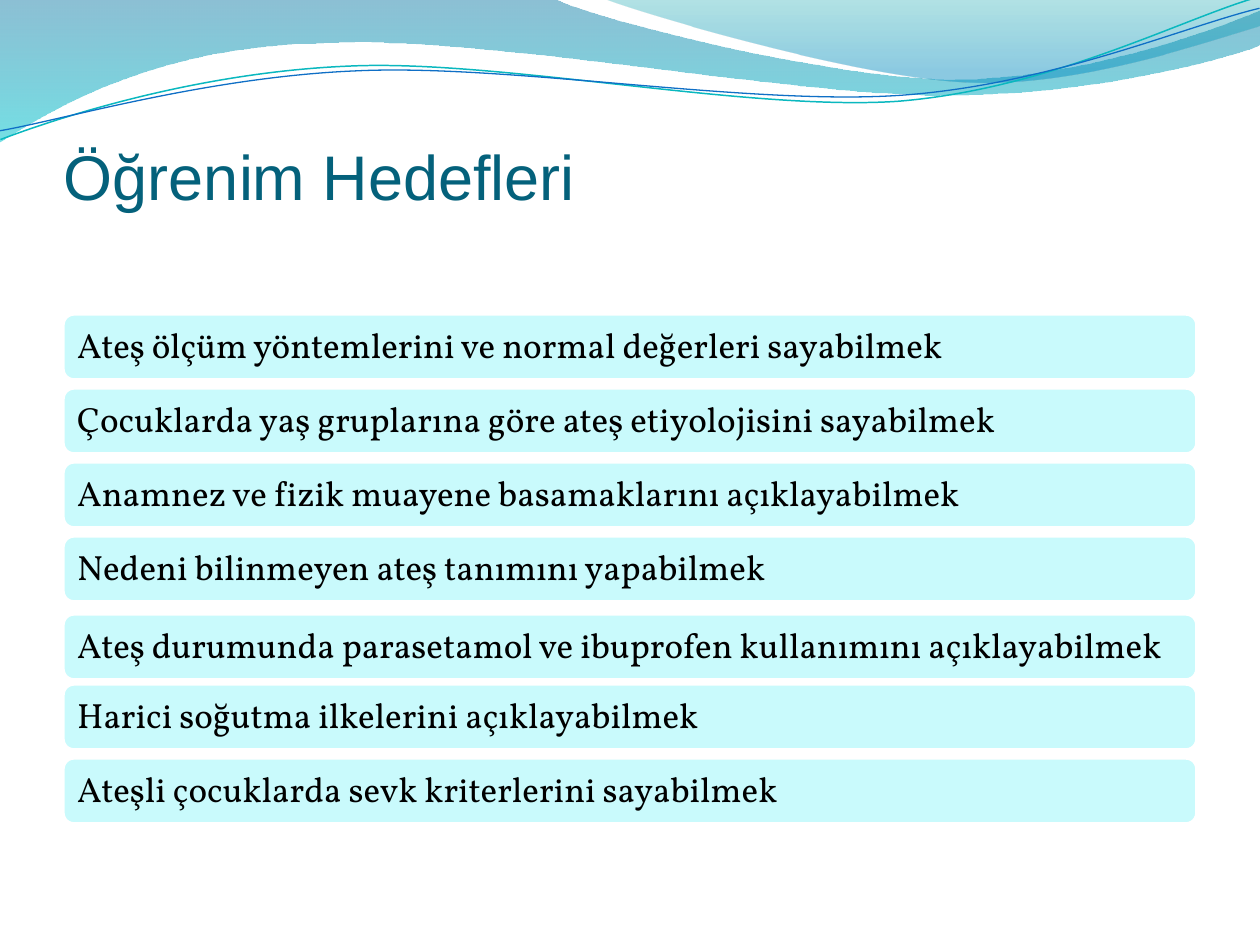
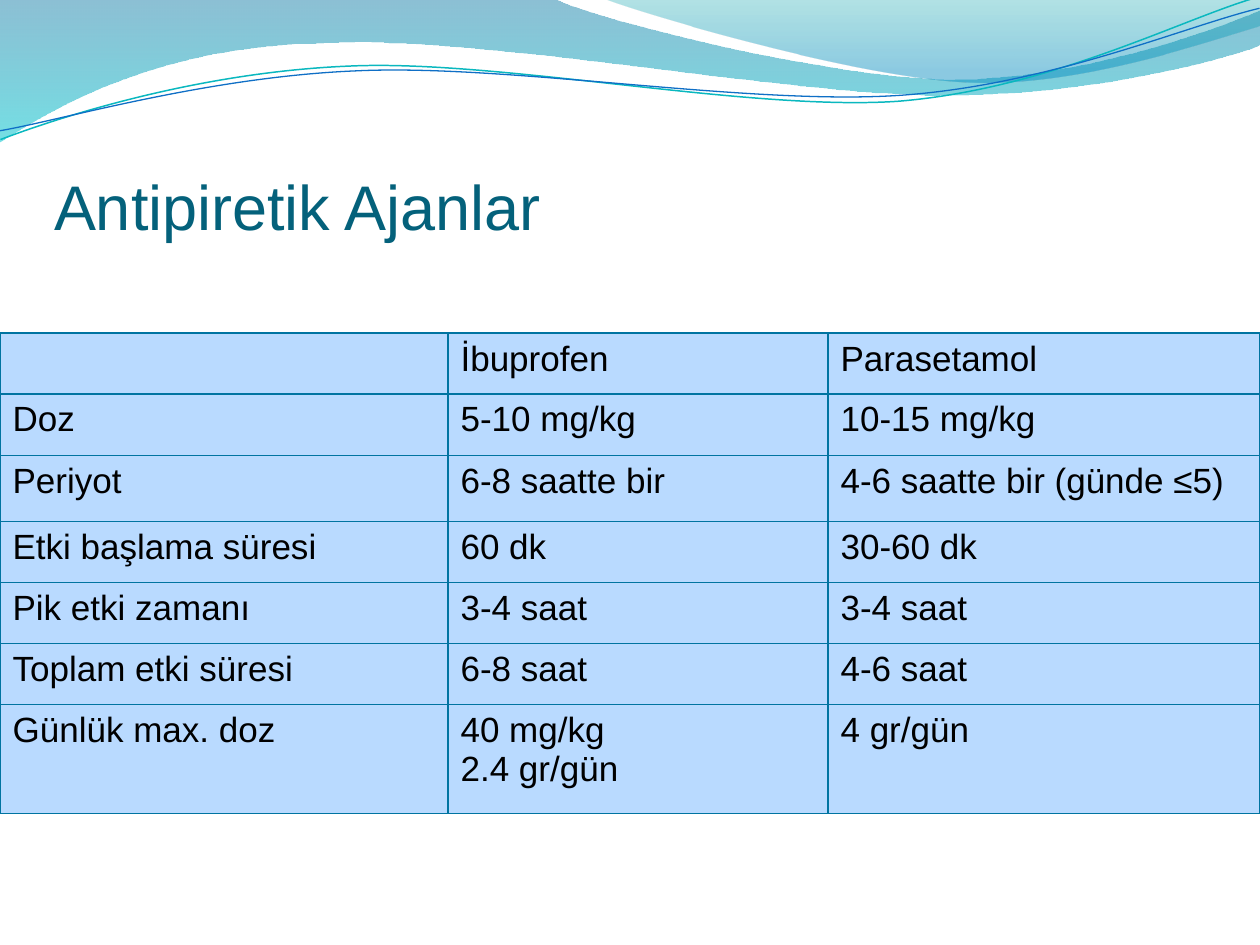
from dataclasses import dataclass

from lxml.etree import SubElement
from pptx import Presentation
from pptx.dml.color import RGBColor
from pptx.enum.lang import MSO_LANGUAGE_ID
from pptx.enum.shapes import MSO_SHAPE
from pptx.enum.text import MSO_ANCHOR, MSO_AUTO_SIZE, PP_ALIGN
from pptx.oxml.ns import qn
from pptx.util import Pt

EMU_PER_PX = 914400 / 126
TITLE_ONLY = 5


def px(length):
    return round(length * EMU_PER_PX)


@dataclass(frozen=True)
class Theme:
    heading_font: str = "Arial"
    goal_font: str = "Vollkorn"
    heading_size: int = 36
    body_size: int = 20
    heading: str = "04617B"
    text: str = "000000"
    bar: str = "C9FAFC"
    bar_edge: str = "FFFFFF"
    cell: str = "B9DAFF"
    cell_border: str = "0074A1"
    # Gradient stops: position, colour, opacity in percent
    broad_wave: tuple = ((0, "0074A1", 45), (1, "00C6CF", 55))
    right_wave: tuple = ((0, "00A1A9", 30), (0.8, "008BBF", 45))
    teal_strand: str = "0AB8BF"
    blue_strand: str = "0F6FC6"


# Outlines in px: two numbers are a straight step, six a Bézier curve
BROAD_WAVE = [
    (0, 0), (554, -1), (600, 21, 837, 79, 955, 79),
    (1075, 79, 1207, 33, 1260, 11), (1261, 45),
    (1239, 55, 1096, 96, 940, 95), (784, 95, 481, 35, 324, 43),
    (163, 45, 58, 105, -1, 142), (0, 0),
]
RIGHT_WAVE = [
    (604, -1), (641, 14, 859, 78, 969, 82),
    (1079, 87, 1211, 40, 1260, 26), (1260, 0), (604, -1),
]
# The strands lie level here and are tilted when drawn
STRAND_TILT = 357.3
TEAL_STRAND = [
    (-2, 110), (59, 90, 199, 52, 350, 53),
    (499, 53, 745, 117, 896, 114), (1049, 109, 1184, 45, 1260, 27),
]
BLUE_STRAND = [
    (-2, 101), (57, 94, 207, 57, 357, 58),
    (509, 58, 750, 112, 902, 108), (1052, 104, 1188, 52, 1262, 38),
]


class Deck:
    def __init__(self, theme):
        self.theme = theme
        self.prs = Presentation()
        self.prs.slide_width, self.prs.slide_height = px(1260), px(945)
        self.layout = self.prs.slide_layouts[TITLE_ONLY]
        self.slide = None

    def add_slide(self, heading, left, top):
        first = self.slide is None
        self.slide = self.prs.slides.add_slide(self.layout)
        if first:
            self.waves()
        self.heading(heading, left, top)

    def style(self, paragraph, font, size, color):
        paragraph.alignment = PP_ALIGN.LEFT
        paragraph.font.name = font
        paragraph.font.size = Pt(size)
        paragraph.font.color.rgb = RGBColor.from_string(color)
        for run in paragraph.runs:
            run.font.language_id = MSO_LANGUAGE_ID.TURKISH

    def heading(self, text, left, top):
        title = self.slide.shapes.title
        title.left, title.top, title.width, title.height = map(px, (left, top, 1134, 158))
        frame = title.text_frame
        frame.text = text
        frame.auto_size = MSO_AUTO_SIZE.NONE
        frame.vertical_anchor = MSO_ANCHOR.BOTTOM
        frame.margin_left = frame.margin_right = frame.margin_bottom = 0
        frame.margin_top = px(6)
        self.style(frame.paragraphs[0], self.theme.heading_font,
                   self.theme.heading_size, self.theme.heading)

    def waves(self):
        """Draw the waves once and hand them to the layout all slides share."""
        theme = self.theme
        shared = [
            self.wave(BROAD_WAVE, theme.broad_wave),
            self.wave(RIGHT_WAVE, theme.right_wave),
            self.strand(TEAL_STRAND, theme.teal_strand, 0.85),
            self.strand(BLUE_STRAND, theme.blue_strand, 0.75),
        ]
        for shape in shared:
            self.layout.shapes.element.append(shape.element)

    def outline(self, steps, close):
        points = [step[i:i + 2] for step in steps for i in range(0, len(step), 2)]
        builder = self.slide.shapes.build_freeform(*points[0], scale=EMU_PER_PX)
        builder.add_line_segments(points[1:], close=close)
        shape = builder.convert_to_shape()
        shape.shadow.inherit = False
        # Join the three points of each curved step into one curve
        outline = shape.element.xpath(".//a:path")[0]
        lines = iter(outline.findall(qn("a:lnTo")))
        for step in steps[1:]:
            parts = [next(lines) for _ in range(len(step) // 2)]
            if len(parts) == 3:
                curve = SubElement(outline, qn("a:cubicBezTo"))
                parts[0].addprevious(curve)
                for part in parts:
                    curve.append(part[0])
                    outline.remove(part)
        return shape

    def wave(self, steps, stops):
        wave = self.outline(steps, close=True)
        wave.line.fill.background()
        wave.fill.gradient()
        wave.fill.gradient_angle = 270
        for stop, (position, color, _) in zip(wave.fill.gradient_stops, stops):
            stop.position = position
            stop.color.rgb = RGBColor.from_string(color)
        stop_colors = wave.element.xpath(".//a:gradFill//a:srgbClr")
        for stop_color, (_, _, opacity) in zip(stop_colors, stops):
            SubElement(stop_color, qn("a:alpha"), val=str(opacity * 1000))
        return wave

    def strand(self, steps, color, width):
        strand = self.outline(steps, close=False)
        strand.rotation = STRAND_TILT
        strand.fill.background()
        strand.line.color.rgb = RGBColor.from_string(color)
        strand.line.width = Pt(width)
        return strand

    def goal_bar(self, text, top):
        bar = self.slide.shapes.add_shape(
            MSO_SHAPE.ROUNDED_RECTANGLE, px(63), px(top), px(1134), px(66))
        bar.shadow.inherit = False
        bar.fill.solid()
        bar.fill.fore_color.rgb = RGBColor.from_string(self.theme.bar)
        bar.line.color.rgb = RGBColor.from_string(self.theme.bar_edge)
        bar.line.width = Pt(2)
        frame = bar.text_frame
        frame.text = text
        frame.word_wrap = True
        frame.vertical_anchor = MSO_ANCHOR.MIDDLE
        frame.margin_left = frame.margin_right = px(11)
        frame.margin_top = frame.margin_bottom = px(10)
        paragraph = frame.paragraphs[0]
        paragraph.line_spacing = 0.9
        self.style(paragraph, self.theme.goal_font, self.theme.body_size, self.theme.text)

    def table(self, rows, top, widths, heights):
        table = self.slide.shapes.add_table(
            len(rows), len(widths), 0, px(top), px(sum(widths)), px(sum(heights))).table
        table.first_row = table.horz_banding = False
        for column, width in zip(table.columns, widths):
            column.width = px(width)
        for row, height, texts in zip(table.rows, heights, rows):
            row.height = px(height)
            for cell, text in zip(row.cells, texts):
                self.cell(cell, text)

    def cell(self, cell, text):
        cell.text = text
        for paragraph in cell.text_frame.paragraphs:
            self.style(paragraph, self.theme.heading_font,
                       self.theme.body_size, self.theme.text)
        # Borders come before the fill in the cell properties
        properties = cell._tc.get_or_add_tcPr()
        for side in ("a:lnL", "a:lnR", "a:lnT", "a:lnB"):
            border = SubElement(properties, qn(side), w=str(Pt(0.75)))
            fill = SubElement(border, qn("a:solidFill"))
            SubElement(fill, qn("a:srgbClr"), val=self.theme.cell_border)
        cell.fill.solid()
        cell.fill.fore_color.rgb = RGBColor.from_string(self.theme.cell)


GOALS = [
    "Ateş ölçüm yöntemlerini ve normal değerleri sayabilmek",
    "Çocuklarda yaş gruplarına göre ateş etiyolojisini sayabilmek",
    "Anamnez ve fizik muayene basamaklarını açıklayabilmek",
    "Nedeni bilinmeyen ateş tanımını yapabilmek",
    "Ateş durumunda parasetamol ve ibuprofen kullanımını açıklayabilmek",
    "Harici soğutma ilkelerini açıklayabilmek",
    "Ateşli çocuklarda sevk kriterlerini sayabilmek",
]
LOWERED_GOAL = 4

ANTIPYRETICS = [
    ("", "İbuprofen", "Parasetamol"),
    ("Doz", "5-10 mg/kg", "10-15 mg/kg"),
    ("Periyot", "6-8 saatte bir", "4-6 saatte bir (günde ≤5)"),
    ("Etki başlama süresi", "60 dk", "30-60 dk"),
    ("Pik etki zamanı", "3-4 saat", "3-4 saat"),
    ("Toplam etki süresi", "6-8 saat", "4-6 saat"),
    ("Günlük max. doz", "40 mg/kg\n2.4 gr/gün", "4 gr/gün"),
]


def main():
    deck = Deck(Theme())

    # Learning goals
    deck.add_slide("Öğrenim Hedefleri", 64, 55)
    for index, goal in enumerate(GOALS):
        nudge = 4 if index == LOWERED_GOAL else 0
        deck.goal_bar(goal, 314 + 74 * index + nudge)

    # Antipyretic agents
    deck.add_slide("Antipiretik Ajanlar", 54, 85)
    deck.table(ANTIPYRETICS, 333, widths=(448, 380, 432),
               heights=(61, 62, 66, 61, 61, 61, 109))

    deck.prs.save("out.pptx")


if __name__ == "__main__":
    main()
